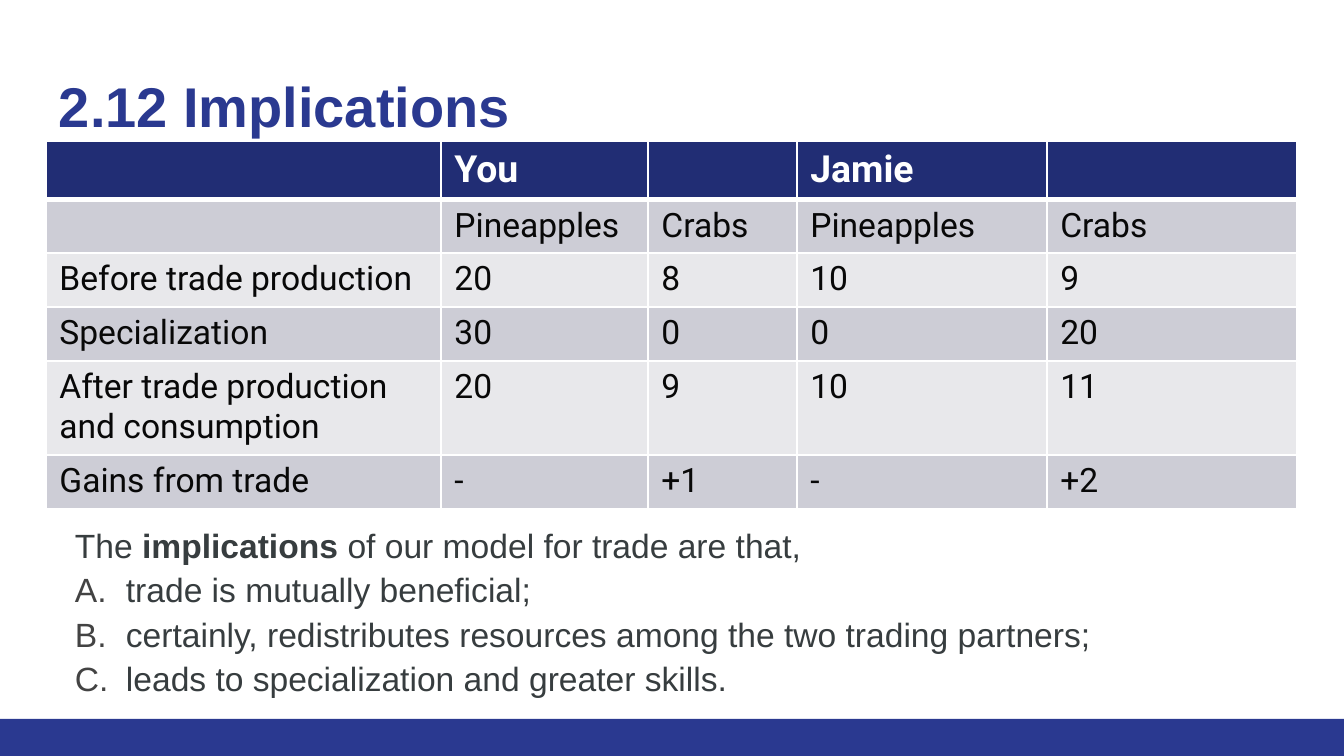
from lxml.etree import SubElement
from pptx import Presentation
from pptx.dml.color import RGBColor
from pptx.enum.shapes import MSO_SHAPE as Shape
from pptx.enum.text import MSO_ANCHOR as Anchor, PP_ALIGN as Align
from pptx.oxml import parse_xml
from pptx.oxml.ns import nsdecls, qn
from pptx.util import Pt

PX = 914400 / 134.4  # EMU in one px
WIDTH, HEIGHT = 1344, 756
INSET = 13
COLORS = {
    "brand": "2A3990", "header": "212D74", "band_dark": "CDCDD6",
    "band_light": "E8E8EB", "white": "FFFFFF", "cell_text": "080808",
    "body": "373D3F", "marker": "434343",
}
COLUMNS = [395, 207, 149, 250, 250]
ROW_HEIGHTS = [57, 53, 53, 53, 92, 53]
TRADE_ROWS = [
    ["", "You", "", "Jamie", ""],
    ["", "Pineapples", "Crabs", "Pineapples", "Crabs"],
    ["Before trade production", "20", "8", "10", "9"],
    ["Specialization", "30", "0", "0", "20"],
    ["After trade production and consumption", "20", "9", "10", "11"],
    ["Gains from trade", "-", "+1", "-", "+2"],
]
IMPLICATIONS = [
    "trade is mutually beneficial;",
    "certainly, redistributes resources among the two trading partners;",
    "leads to specialization and greater skills.",
]


def emu(px):
    return round(px * PX)


def rgb(name):
    return RGBColor.from_string(COLORS[name])


def add_text(paragraph, text, size=18, font="Arial", color="body", bold=False):
    run = paragraph.add_run()
    run.text = text
    run.font.size = Pt(size)
    run.font.name = font
    run.font.bold = bold
    run.font.color.rgb = rgb(color)


def add_frame(slide, box):
    """Add a wrapping text box and return its text frame."""
    frame = slide.shapes.add_textbox(*map(emu, box)).text_frame
    frame.word_wrap = True
    frame.vertical_anchor = Anchor.TOP
    frame.margin_left = frame.margin_right = emu(INSET)
    frame.margin_top = frame.margin_bottom = emu(INSET)
    return frame


def add_footer_bar(slide, box):
    bar = slide.shapes.add_shape(Shape.RECTANGLE, *map(emu, box))
    bar.shadow.inherit = False
    bar.fill.solid()
    bar.fill.fore_color.rgb = rgb("brand")
    bar.line.fill.background()


def add_title(slide, box, text):
    paragraph = add_frame(slide, box).paragraphs[0]
    paragraph.line_spacing = 1.1
    add_text(paragraph, text, size=30, color="brand", bold=True)


def set_borders(cell, **widths):
    """Draw white cell edges; widths are points keyed by L, R, T and B."""
    properties = cell._tc.get_or_add_tcPr()
    for index, (side, width) in enumerate(widths.items()):
        properties.insert(index, parse_xml(
            f'<a:ln{side} {nsdecls("a")} w="{Pt(width)}"><a:solidFill>'
            f'<a:srgbClr val="{COLORS["white"]}"/></a:solidFill></a:ln{side}>'))


def add_trade_table(slide, box, rows):
    table = slide.shapes.add_table(len(rows), len(COLUMNS), *map(emu, box)).table
    table.first_row = table.horz_banding = False
    for column, width in zip(table.columns, COLUMNS):
        column.width = emu(width)
    for index, (row, height, texts) in enumerate(zip(table.rows, ROW_HEIGHTS, rows)):
        row.height = emu(height)
        if index == 0:
            fill, style = "header", dict(size=20, color="white", bold=True)
        else:
            fill = "band_dark" if index % 2 else "band_light"
            style = dict(size=18, color="cell_text")
        for cell, text in zip(row.cells, texts):
            cell.fill.solid()
            cell.fill.fore_color.rgb = rgb(fill)
            # The rule under the header is thicker
            set_borders(cell, L=1, R=1, T=3 if index == 1 else 1,
                        B=3 if index == 0 else 1)
            if text:
                add_text(cell.text_frame.paragraphs[0], text, font="Roboto", **style)


def format_body(paragraph, left, indent=0):
    paragraph.alignment = Align.JUSTIFY
    paragraph.line_spacing = 1.1
    properties = paragraph._p.get_or_add_pPr()
    properties.set("marL", str(emu(left)))
    properties.set("indent", str(emu(indent)))
    return properties


def add_implications(slide, box, items):
    frame = add_frame(slide, box)
    # Lead sentence
    lead = frame.paragraphs[0]
    format_body(lead, 16)
    add_text(lead, "The ")
    add_text(lead, "implications", bold=True)
    add_text(lead, " of our model for trade are that,")
    # Lettered list
    for item in items:
        paragraph = frame.add_paragraph()
        properties = format_body(paragraph, 67, -51)
        marker_color = SubElement(properties, qn("a:buClr"))
        SubElement(marker_color, qn("a:srgbClr"), val=COLORS["marker"])
        SubElement(properties, qn("a:buFont"), typeface="Arial")
        SubElement(properties, qn("a:buAutoNum"), type="alphaUcPeriod")
        add_text(paragraph, item)


def main():
    presentation = Presentation()
    presentation.slide_width = emu(WIDTH)
    presentation.slide_height = emu(HEIGHT)
    slide = presentation.slides.add_slide(presentation.slide_layouts[6])
    left, width = 46, sum(COLUMNS)
    add_footer_bar(slide, (0, 719, WIDTH, 37))
    add_title(slide, (left, 52, width, 89), "2.12 Implications")
    add_trade_table(slide, (left, 141, width, sum(ROW_HEIGHTS)), TRADE_ROWS)
    add_implications(slide, (left, 508, width, 202), IMPLICATIONS)
    presentation.save("out.pptx")


if __name__ == "__main__":
    main()
